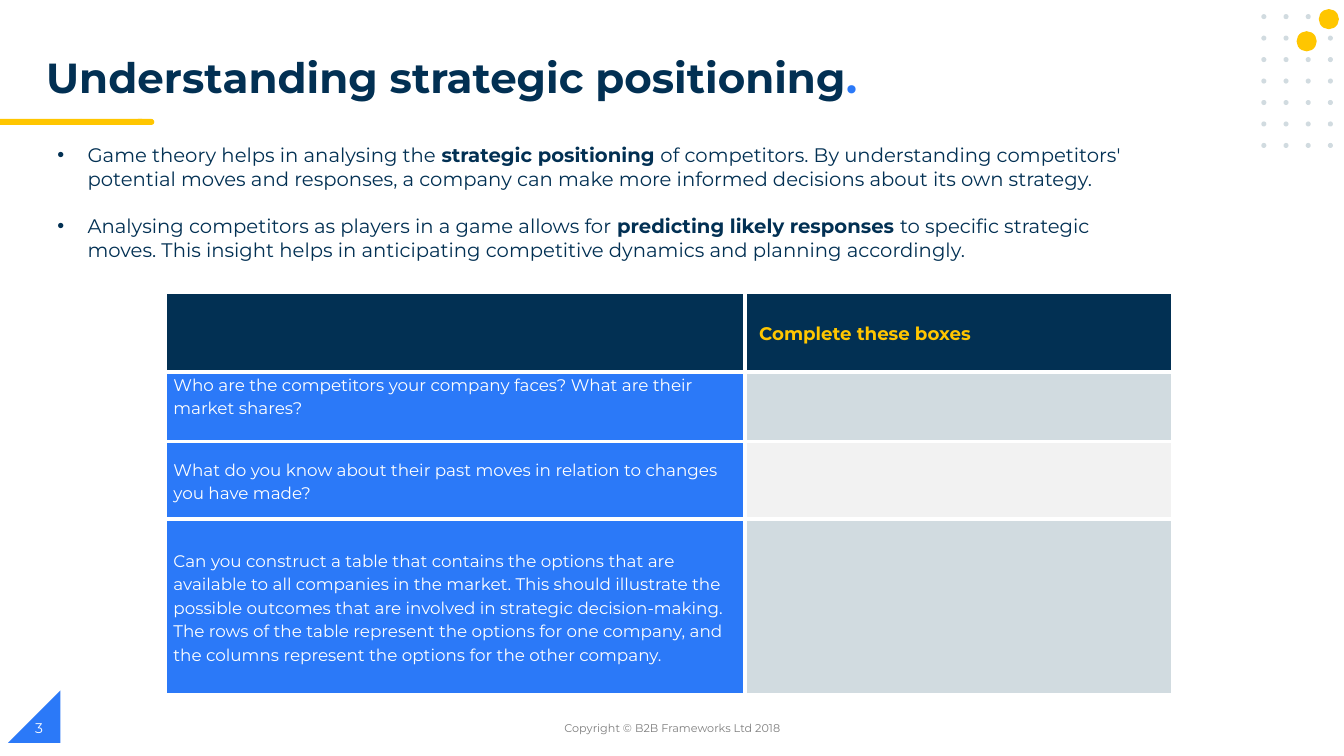
from lxml import etree
from pptx import Presentation
from pptx.dml.color import RGBColor
from pptx.enum import shapes, text
from pptx.oxml import ns
from pptx.util import Inches, Pt

FONT = "Montserrat"
COLORS = {
    "navy": "023053",
    "blue": "2B79F8",
    "yellow": "FFC600",
    "mist": "D1DBE0",
    "pale": "F2F2F2",
    "gray": "7F7F7F",
    "white": "FFFFFF",
}
BULLETS = [
    [("Game theory helps in analysing the ", False),
     ("strategic positioning ", True),
     ("of competitors. By understanding competitors' potential moves and responses, "
      "a company can make more informed decisions about its own strategy.", False)],
    [("Analysing competitors as players in a game allows for ", False),
     ("predicting likely responses ", True),
     ("to specific strategic moves. This insight helps in anticipating competitive "
      "dynamics and planning accordingly.", False)],
]
# Question, answer cell colour, row height, anchor
QUESTIONS = [
    ("Who are the competitors your company faces? What are their market shares?",
     "mist", 0.69, text.MSO_ANCHOR.TOP),
    ("What do you know about their past moves in relation to changes you have made?",
     "pale", 0.77, text.MSO_ANCHOR.MIDDLE),
    ("Can you construct a table that contains the options that are available to all "
     "companies in the market. This should illustrate the possible outcomes that are "
     "involved in strategic decision-making. The rows of the table represent the options "
     "for one company, and the columns represent the options for the other company.",
     "mist", 1.74, text.MSO_ANCHOR.MIDDLE),
]


def rgb(color):
    return RGBColor.from_string(COLORS[color])


def style(font, size, color, bold=False):
    font.name = FONT
    font.size = Pt(size)
    font.bold = bold
    font.color.rgb = rgb(color)


def add_block(slide, kind, left, top, width, height, color):
    shape = slide.shapes.add_shape(
        kind, Inches(left), Inches(top), Inches(width), Inches(height))
    shape.shadow.inherit = False
    shape.fill.solid()
    shape.fill.fore_color.rgb = rgb(color)
    shape.line.fill.background()
    return shape


def add_text_frame(slide, left, top, width, height, anchor=text.MSO_ANCHOR.TOP):
    box = slide.shapes.add_textbox(
        Inches(left), Inches(top), Inches(width), Inches(height))
    box.text_frame.word_wrap = True
    box.text_frame.vertical_anchor = anchor
    return box.text_frame


def add_runs(paragraph, parts):
    """Add (text, size, color, bold) runs to a paragraph."""
    for words, size, color, bold in parts:
        run = paragraph.add_run()
        run.text = words
        style(run.font, size, color, bold)


def add_dot_pattern(slide, left, top):
    kind = shapes.MSO_SHAPE.OVAL
    for row in range(7):
        for column in range(4):
            add_block(slide, kind, left + column * 0.22, top + row * 0.213,
                      0.05, 0.05, "mist")
    for x, y in [(0.57, -0.05), (0.35, 0.17)]:
        add_block(slide, kind, left + x, top + y, 0.2, 0.2, "yellow")


def add_title(slide, left, top, width, height):
    frame = add_text_frame(slide, left, top, width, height)
    paragraph = frame.paragraphs[0]
    paragraph.line_spacing = 0.9
    add_runs(paragraph, [("Understanding strategic positioning", 30, "navy", True),
                         (".", 30, "blue", True)])
    # Underline from the slide edge, with a rounded end
    bar_top = top + 0.66
    add_block(slide, shapes.MSO_SHAPE.FLOWCHART_TERMINATOR,
              1.34, bar_top, 0.19, 0.06, "yellow")
    add_block(slide, shapes.MSO_SHAPE.RECTANGLE, 0, bar_top, 1.41, 0.06, "yellow")


def add_bullet(paragraph):
    properties = paragraph._p.get_or_add_pPr()
    properties.set("marL", str(Inches(0.31)))
    properties.set("indent", str(Inches(-0.3)))
    color = etree.SubElement(properties, ns.qn("a:buClr"))
    etree.SubElement(color, ns.qn("a:srgbClr"), val=COLORS["navy"])
    etree.SubElement(properties, ns.qn("a:buFont"), typeface="Arial")
    etree.SubElement(properties, ns.qn("a:buChar"), char="•")


def add_bullets(slide, left, top, width, height):
    frame = add_text_frame(slide, left, top, width, height)
    for index, parts in enumerate(BULLETS):
        paragraph = frame.add_paragraph() if index else frame.paragraphs[0]
        add_bullet(paragraph)
        if index:
            paragraph.space_before = Pt(17)
        add_runs(paragraph, [(words, 14, "navy", bold) for words, bold in parts])


def add_borders(cell):
    properties = cell._tc.get_or_add_tcPr()
    for position, side in enumerate(("a:lnL", "a:lnR", "a:lnT", "a:lnB")):
        line = etree.Element(ns.qn(side), w=str(Pt(3)))
        fill = etree.SubElement(line, ns.qn("a:solidFill"))
        etree.SubElement(fill, ns.qn("a:srgbClr"), val=COLORS["white"])
        properties.insert(position, line)


def fill_cell(cell, words, fill, size=12, color="white", bold=False,
              anchor=text.MSO_ANCHOR.MIDDLE, left=0.08):
    cell.fill.solid()
    cell.fill.fore_color.rgb = rgb(fill)
    add_borders(cell)
    cell.vertical_anchor = anchor
    cell.margin_left, cell.margin_right = Inches(left), Inches(0.08)
    cell.margin_top = cell.margin_bottom = 0
    paragraph = cell.text_frame.paragraphs[0]
    paragraph.text = words
    paragraph.line_spacing = 1.15
    style(paragraph.font, size, color, bold)
    for run in paragraph.runs:
        style(run.font, size, color, bold)


def add_question_table(slide, left, top, column_widths, header_height):
    heights = [header_height] + [height for _, _, height, _ in QUESTIONS]
    table = slide.shapes.add_table(
        len(heights), 2, Inches(left), Inches(top),
        Inches(sum(column_widths)), Inches(sum(heights))).table
    for column, width in zip(table.columns, column_widths):
        column.width = Inches(width)
    for row, height in zip(table.rows, heights):
        row.height = Inches(height)

    fill_cell(table.cell(0, 0), "", "navy")
    fill_cell(table.cell(0, 1), "Complete these boxes", "navy", 13, "yellow", True,
              left=0.14)
    for row, (question, answer_fill, _, anchor) in enumerate(QUESTIONS, 1):
        fill_cell(table.cell(row, 0), question, "blue", anchor=anchor)
        fill_cell(table.cell(row, 1), "", answer_fill)


def add_footer(slide, top):
    triangle = add_block(slide, shapes.MSO_SHAPE.RIGHT_TRIANGLE,
                         0.08, top - 0.17, 0.52, 0.52, "blue")
    triangle._element.spPr.xfrm.set("flipH", "1")
    middle = text.MSO_ANCHOR.MIDDLE
    copyright_line = add_text_frame(slide, 4.42, top, 4.5, 0.4, middle).paragraphs[0]
    copyright_line.alignment = text.PP_ALIGN.CENTER
    add_runs(copyright_line, [("Copyright © B2B Frameworks Ltd 2018", 8, "gray", False)])
    page_number = add_text_frame(slide, 0.25, top, 3, 0.4, middle).paragraphs[0]
    add_runs(page_number, [("3", 10, "white", False)])


def main():
    presentation = Presentation()
    presentation.slide_width = Inches(13.33)
    presentation.slide_height = Inches(7.5)
    slide = presentation.slides.add_slide(presentation.slide_layouts[6])
    add_dot_pattern(slide, 12.51, 0.14)
    add_footer(slide, 7.02)
    add_title(slide, 0.36, 0.52, 9.27, 0.6)
    add_bullets(slide, 0.46, 1.37, 10.91, 1.28)
    add_question_table(slide, 1.64, 2.9, (5.75, 4.24), 0.79)
    presentation.save("out.pptx")


if __name__ == "__main__":
    main()
